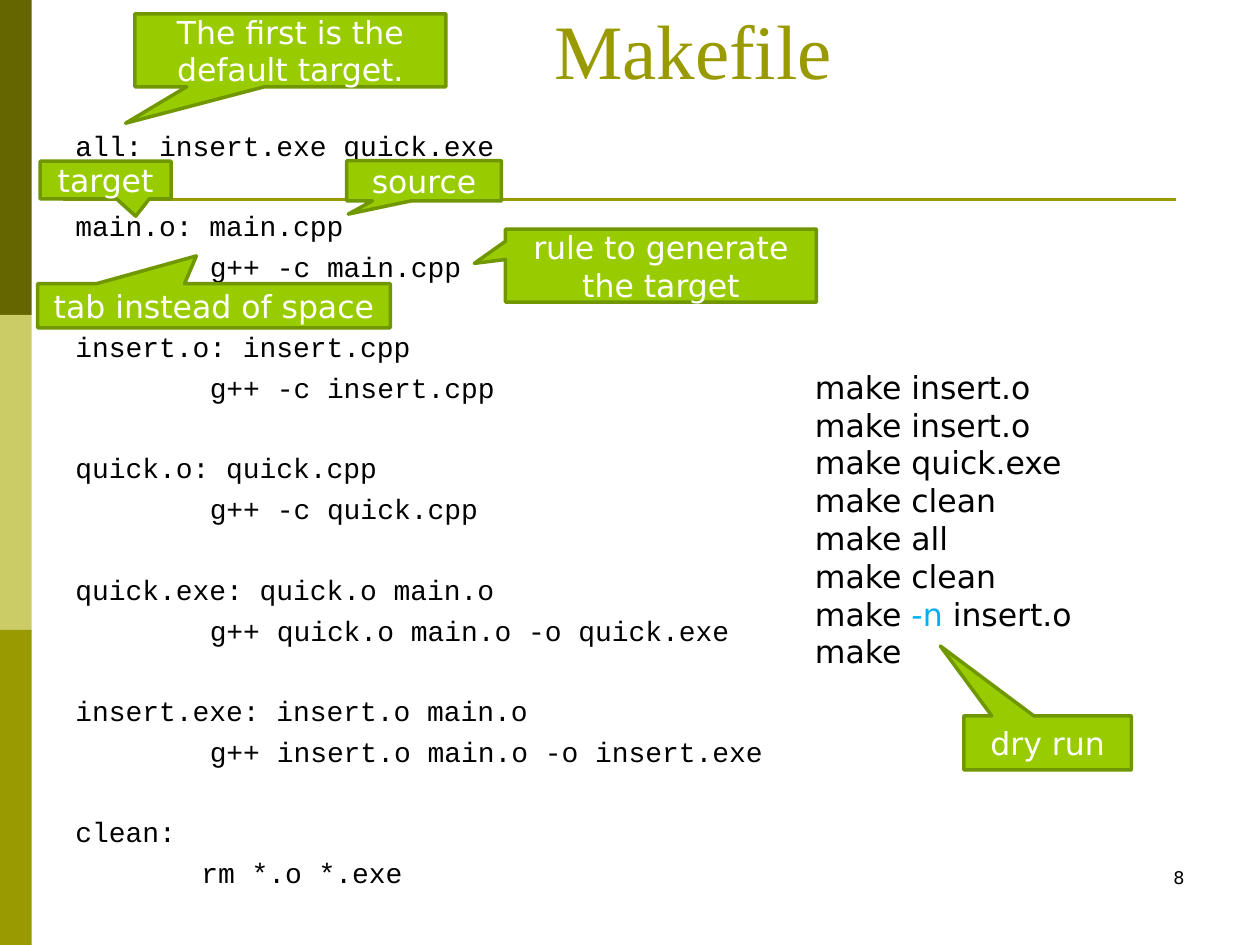
"""Build the Makefile slide with its annotated rules and sample commands."""
from lxml import etree
from pptx import Presentation
from pptx import util as u
from pptx.dml.color import RGBColor
from pptx.enum import shapes, text
from pptx.oxml.ns import qn

COLOURS = {
    "dark": "666600", "pale": "CCCC66", "olive": "999900",
    "callout": "99CC00", "edge": "719700",
    "black": "000000", "white": "FFFFFF", "option": "00B0F0",
}
CODE, SANS, SERIF = "Courier New", "DejaVu Sans", "Times New Roman"


def colour(name):
    return RGBColor.from_string(COLOURS[name])


def write(frame, lines, font, size, tint="black", align=text.PP_ALIGN.LEFT):
    frame.word_wrap = True
    frame.text = "\n".join(lines)
    for para in frame.paragraphs:
        para.alignment = align
        for span in para.runs:
            span.font.name = font
            span.font.size = u.Pt(size)
            span.font.color.rgb = colour(tint)


deck = Presentation()
deck.slide_width, deck.slide_height = u.Cm(25.4), u.Cm(19.05)
page = deck.slides.add_slide(deck.slide_layouts[6])

band_height = 6.35
for index, name in enumerate(("dark", "pale", "olive")):
    band = page.shapes.add_shape(
        shapes.MSO_SHAPE.RECTANGLE, 0, u.Cm(index * band_height), u.Cm(0.64), u.Cm(band_height))
    band.shadow.inherit = False
    band.fill.solid()
    band.fill.fore_color.rgb = colour(name)
    band.line.fill.background()

rule = page.shapes.add_connector(
    shapes.MSO_CONNECTOR.STRAIGHT, u.Cm(1.27), u.Cm(4.02), u.Cm(23.7), u.Cm(4.02))
rule.line.color.rgb = colour("olive")
rule.line.width = u.Pt(1.5)
etree.SubElement(rule._element.spPr, qn("a:effectLst"))

title = page.shapes.add_textbox(u.Cm(10.92), 0, u.Cm(14.48), u.Cm(2.03))
title.text_frame.vertical_anchor = text.MSO_ANCHOR.BOTTOM
write(title.text_frame, ["Makefile"], SERIF, 44, "olive")

targets = [
    ("all: insert.exe quick.exe", None),
    ("main.o: main.cpp", "g++ -c main.cpp"),
    ("insert.o: insert.cpp", "g++ -c insert.cpp"),
    ("quick.o: quick.cpp", "g++ -c quick.cpp"),
    ("quick.exe: quick.o main.o", "g++ quick.o main.o -o quick.exe"),
    ("insert.exe: insert.o main.o", "g++ insert.o main.o -o insert.exe"),
    ("clean:", "rm *.o *.exe"),
]
code_lines = [line for target in targets for line in target if line]
headings = [heading for heading, command in targets]
line_gap, block_gap = 4.26, 26.64
listing = page.shapes.add_textbox(u.Cm(1.27), u.Cm(2.46), u.Cm(22.86), u.Cm(16.15))
write(listing.text_frame, code_lines, CODE, 16)
for para in listing.text_frame.paragraphs:
    starts_block = para.text in headings[1:]
    para.space_before = u.Pt(block_gap if starts_block else line_gap)
    if para.text not in headings:
        indent = u.Cm(2.54) if para.text.startswith("rm") else u.Cm(2.71)
        para._p.get_or_add_pPr().set("marL", str(indent))

number = page.shapes.add_textbox(u.Cm(18.21), u.Cm(17.35), u.Cm(5.92), u.Cm(1.27))
write(number.text_frame, ["8"], SANS, 10, align=text.PP_ALIGN.RIGHT)

commands = ["make insert.o", "make insert.o", "make quick.exe", "make clean",
            "make all", "make clean", "make ", "make"]
session = page.shapes.add_textbox(u.Cm(16.18), u.Cm(7.29), u.Cm(8.84), u.Cm(6.4))
write(session.text_frame, commands, SANS, 18)
dry_run = session.text_frame.paragraphs[6]
for words, tint in (("-n ", "option"), ("insert.o", "black")):
    span = dry_run.add_run()
    span.text = words
    span.font.name = SANS
    span.font.size = u.Pt(18)
    span.font.color.rgb = colour(tint)

callouts = [
    ("target", 0.81, 3.25, 2.64, 0.76, 0.23, 0.96),
    ("source", 6.99, 3.24, 3.12, 0.81, -0.49, 0.83),
    ("rule to generate the target", 10.19, 4.62, 6.27, 1.47, -0.6, -0.03),
    ("tab instead of space", 0.76, 5.72, 7.11, 0.89, -0.05, -1.13),
    ("The first is the default target.", 2.72, 0.28, 6.27, 1.47, -0.53, 1),
    ("dry run", 19.43, 14.43, 3.38, 1.09, -0.64, -1.79),
]
for words, left, top, width, height, tip_x, tip_y in callouts:
    box = page.shapes.add_shape(
        shapes.MSO_SHAPE.RECTANGULAR_CALLOUT, u.Cm(left), u.Cm(top), u.Cm(width), u.Cm(height))
    box.shadow.inherit = False
    box.adjustments[0], box.adjustments[1] = tip_x, tip_y
    box.fill.solid()
    box.fill.fore_color.rgb = colour("callout")
    box.line.color.rgb = colour("edge")
    box.line.width = u.Pt(2)
    box.text_frame.vertical_anchor = text.MSO_ANCHOR.MIDDLE
    write(box.text_frame, [words], SANS, 18, "white", text.PP_ALIGN.CENTER)

deck.save("out.pptx")
